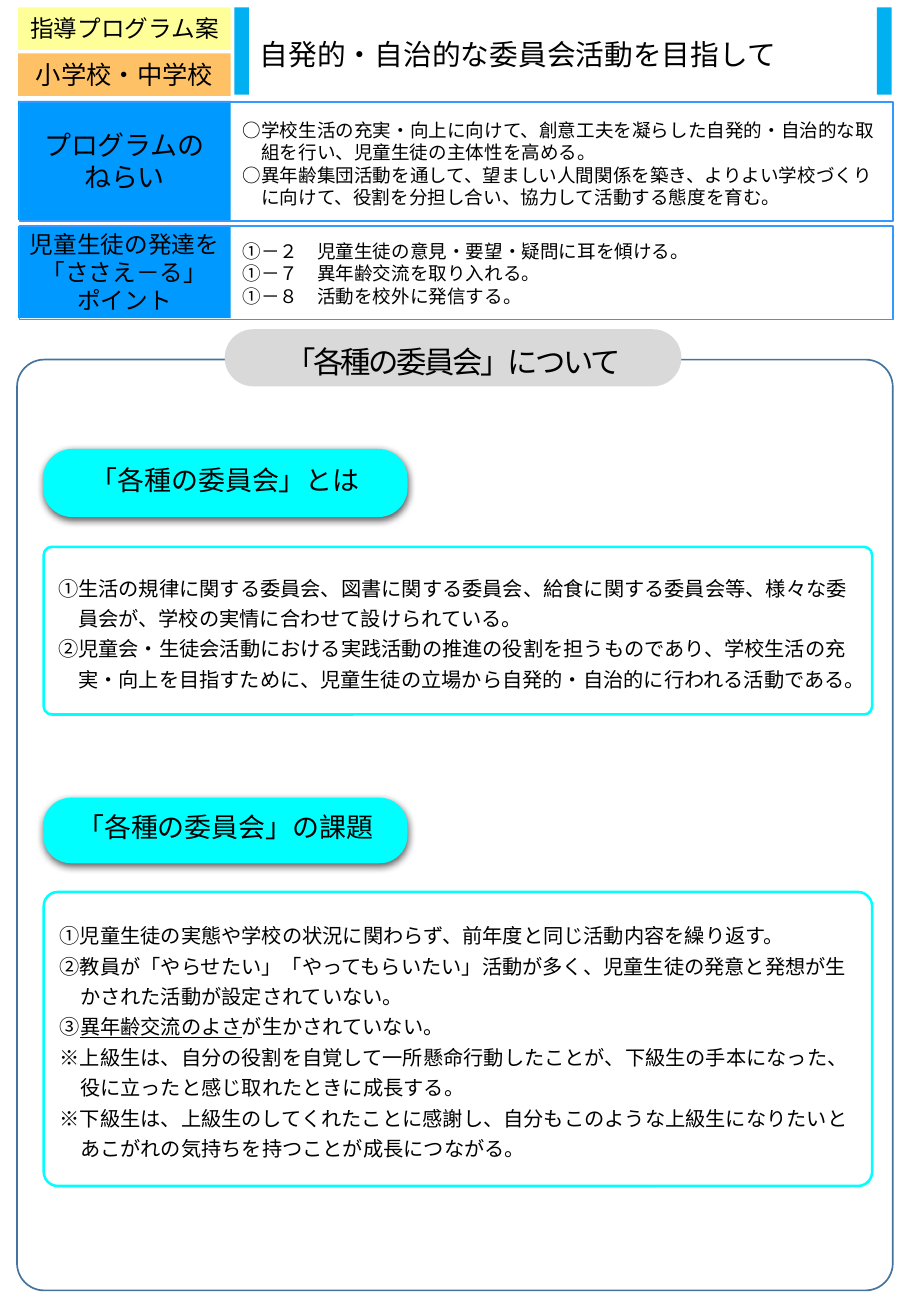
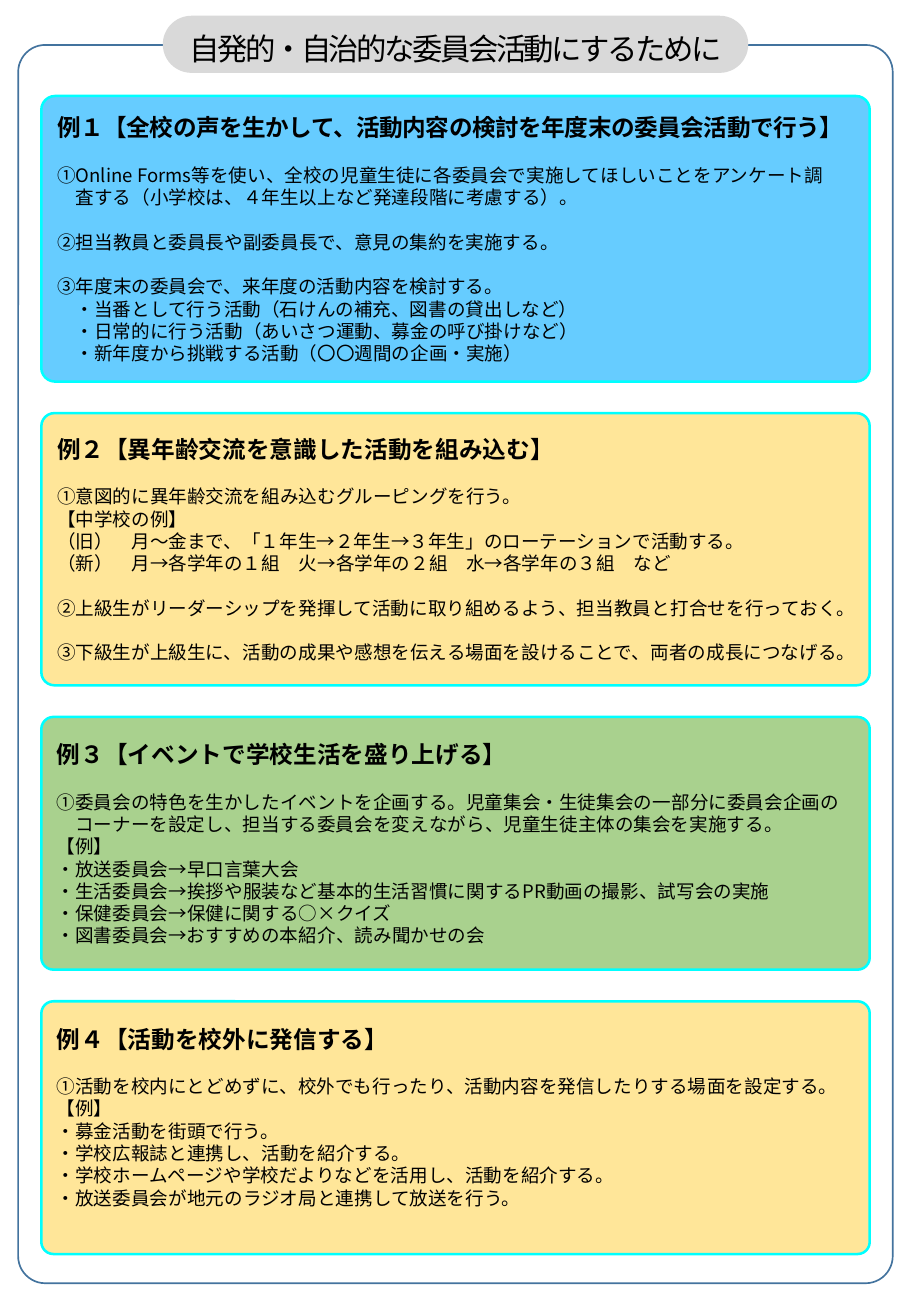
"""Build the two-page committee activity programme."""
from dataclasses import dataclass

from lxml.etree import SubElement
from pptx import Presentation
from pptx.dml.color import RGBColor
from pptx.enum.shapes import MSO_SHAPE
from pptx.enum.text import MSO_ANCHOR, PP_ALIGN
from pptx.oxml.ns import qn
from pptx.util import Pt

PX = 9144


@dataclass(frozen=True)
class Theme:
    body_font: str = "Noto Sans CJK JP"
    label_font: str = "Calibri"
    ink: str = "000000"
    yellow: str = "FFFF99"
    orange: str = "FF9900"
    bar: str = "00B0F0"
    label: str = "0099FF"
    label_frame: str = "3399FF"
    page_frame: str = "43739E"
    pill: str = "D9D9D9"
    cyan: str = "00FFFF"
    white: str = "FFFFFF"
    sky: str = "66CCFF"
    cream: str = "FFE699"
    green: str = "A9D18E"
    small: int = 11
    body: int = 12
    example: int = 14
    school: int = 15
    heading: int = 16
    title: int = 17
    page: int = 18


THEME = Theme()
LABEL = {"font": THEME.label_font, "center": True}
PILL = {"size": THEME.page, "pitch": 26, "center": True, "spacing": -150}
HEADING = {"size": THEME.heading, "pitch": 15, "center": True}
SMALL = {"size": THEME.small, "pitch": 13.2}
BODY = {"size": THEME.body, "pitch": 18}
EXAMPLE = {"size": THEME.example, "pitch": 16.8, "bold": True}
GAP = {"gap": 13.2}
INNER = {"indent": 1}


def add_box(slide, bounds, fill=None, line=None, width=1, radius=None, opacity=None, shadow=False):
    kind = MSO_SHAPE.RECTANGLE if radius is None else MSO_SHAPE.ROUNDED_RECTANGLE
    shape = slide.shapes.add_shape(kind, *(value * PX for value in bounds))
    if radius is not None:
        shape.adjustments[0] = radius
    shape.shadow.inherit = False
    properties = shape.element.spPr
    if fill:
        shape.fill.solid()
        shape.fill.fore_color.rgb = RGBColor.from_string(fill)
    else:
        shape.fill.background()
    if opacity:
        color = properties.find(".//" + qn("a:srgbClr"))
        SubElement(color, qn("a:alpha"), val=str(opacity * 1000))
    if line:
        shape.line.color.rgb = RGBColor.from_string(line)
        shape.line.width = Pt(width)
    else:
        shape.line.fill.background()
    if shadow:
        effects = properties.find(qn("a:effectLst"))
        outer = SubElement(effects, qn("a:outerShdw"), blurRad="57150", dist="19050",
                           dir="5400000", algn="ctr", rotWithShape="0")
        color = SubElement(outer, qn("a:srgbClr"), val=THEME.ink)
        SubElement(color, qn("a:alpha"), val="63000")
    return shape


def write_text(shape, style, paragraphs, anchor=MSO_ANCHOR.MIDDLE, wrap=True, bottom=5):
    frame = shape.text_frame
    frame_format = {"word_wrap": wrap, "vertical_anchor": anchor, "margin_left": 10 * PX,
                    "margin_right": 2 * PX, "margin_top": 5 * PX, "margin_bottom": bottom * PX}
    if style.get("center"):
        frame_format["margin_right"] = 10 * PX
    for name, value in frame_format.items():
        setattr(frame, name, value)
    for index, (text, changes) in enumerate(paragraphs):
        look = {**style, **changes}
        paragraph = frame.paragraphs[0] if index == 0 else frame.add_paragraph()
        paragraph_format = {
            "alignment": PP_ALIGN.CENTER if look.get("center") else PP_ALIGN.LEFT,
            "space_before": Pt(look.get("gap", 0)),
            "line_spacing": Pt(look["pitch"]) if "pitch" in look else None,
        }
        for name, value in paragraph_format.items():
            setattr(paragraph, name, value)
        if not look.get("center"):
            hang = Pt(look["size"])
            properties = paragraph._p.get_or_add_pPr()
            properties.set("marL", str(hang * (1 + look.get("indent", 0))))
            properties.set("indent", str(-hang))
        for row, row_text in enumerate(text.split("\n")):
            if row:
                paragraph.add_line_break()
            for part, part_text in enumerate(row_text.split("|")):
                run = paragraph.add_run()
                run.text = part_text
                font_format = {"name": look.get("font", THEME.body_font), "size": Pt(look["size"]),
                               "bold": look.get("bold", False), "underline": part % 2 == 1}
                for name, value in font_format.items():
                    setattr(run.font, name, value)
                run.font.color.rgb = RGBColor.from_string(THEME.ink)
                run_properties = run.font._element
                SubElement(run_properties, qn("a:ea"), typeface=font_format["name"])
                run_properties.set("spc", str(look.get("spacing", 0)))


presentation = Presentation()
presentation.slide_width = 750 * PX
presentation.slide_height = 1083 * PX

pages = [
    ((14, 296, 721, 766), (185, 271, 376, 47), "「各種の委員会」について"),
    ((15, 37, 720, 1019), (134, 13, 482, 47), "自発的・自治的な委員会活動にするために"),
]
slides = []
for frame_bounds, pill_bounds, page_title in pages:
    slide = presentation.slides.add_slide(presentation.slide_layouts[6])
    add_box(slide, frame_bounds, line=THEME.page_frame, radius=0.031)
    pill = add_box(slide, pill_bounds, THEME.pill, radius=0.5)
    write_text(pill, PILL, [(page_title, {})])
    slides.append(slide)
overview, examples = slides

title = overview.shapes.add_textbox(204 * PX, 8 * PX, 518 * PX, 70 * PX)
write_text(title, {"size": THEME.title, "pitch": 23}, [("自発的・自治的な委員会活動を目指して", {})])
for left in (193, 722):
    add_box(overview, (left, 6, 12, 72), THEME.bar)

labels = [
    (6, 35, THEME.yellow, None, THEME.example, ["指導プログラム案"]),
    (44, 35, THEME.orange, 60, THEME.school, ["小学校・中学校"]),
    (83, 98, THEME.label, None, THEME.heading, ["プログラムの", "ねらい"]),
    (186, 76, THEME.label, None, THEME.example, ["児童生徒の発達を", "「ささえ－る」", "ポイント"]),
]
for top, height, fill, opacity, size, lines in labels:
    label = add_box(overview, (15, top, 175, height), fill, opacity=opacity)
    write_text(label, {**LABEL, "size": size}, [(text, {}) for text in lines], wrap=False)

summaries = [
    (84, 98, 93, 79, MSO_ANCHOR.TOP, [
        "○学校生活の充実・向上に向けて、創意工夫を凝らした自発的・自治的な取\n組を行い、児童生徒の主体性を高める。",
        "○異年齢集団活動を通して、望ましい人間関係を築き、よりよい学校づくり\nに向けて、役割を分担し合い、協力して活動する態度を育む。",
    ]),
    (186, 77, 187, 76, MSO_ANCHOR.MIDDLE, [
        "①－２　児童生徒の意見・要望・疑問に耳を傾ける。",
        "①－７　異年齢交流を取り入れる。",
        "①－８　活動を校外に発信する。",
    ]),
]
for top, height, text_top, text_height, anchor, lines in summaries:
    add_box(overview, (16, top, 719, height), line=THEME.label_frame)
    summary = overview.shapes.add_textbox(190 * PX, text_top * PX, 543 * PX, text_height * PX)
    write_text(summary, SMALL, [(text, {}) for text in lines], anchor)

sections = [
    (370, 55, "「各種の委員会」とは", 450, 138, [
        "①生活の規律に関する委員会、図書に関する委員会、給食に関する委員会等、様々な委\n員会が、学校の実情に合わせて設けられている。",
        "②児童会・生徒会活動における実践活動の推進の役割を担うものであり、学校生活の充\n実・向上を目指すために、児童生徒の立場から自発的・自治的に行われる活動である。",
    ]),
    (657, 53, "「各種の委員会」の課題", 734, 242, [
        "①児童生徒の実態や学校の状況に関わらず、前年度と同じ活動内容を繰り返す。",
        "②教員が「やらせたい」「やってもらいたい」活動が多く、児童生徒の発意と発想が生\nかされた活動が設定されていない。",
        "③|異年齢交流のよさ|が生かされていない。",
        "※上級生は、自分の役割を自覚して一所懸命行動したことが、下級生の手本になった、\n役に立ったと感じ取れたときに成長する。",
        "※下級生は、上級生のしてくれたことに感謝し、自分もこのような上級生になりたいと\nあこがれの気持ちを持つことが成長につながる。",
    ]),
]
for top, height, heading, panel_top, panel_height, lines in sections:
    button = add_box(overview, (36, top, 299, height), THEME.cyan, THEME.cyan, 0.75, 0.427, shadow=True)
    write_text(button, HEADING, [(heading, {})], wrap=False)
    panel = add_box(overview, (36, panel_top, 682, panel_height), THEME.white, THEME.cyan, 1.5, 0.048)
    write_text(panel, BODY, [(text, {}) for text in lines])

cards = [
    (235, THEME.sky, 5, ("例１【全校の声を生かして、活動内容の検討を年度末の委員会活動で行う】", {"spacing": -30}), [
        ("①Online Forms等を使い、全校の児童生徒に各委員会で実施してほしいことをアンケート調\n査する（小学校は、４年生以上など発達段階に考慮する）。", GAP),
        ("②担当教員と委員長や副委員長で、意見の集約を実施する。", GAP),
        ("③年度末の委員会で、来年度の活動内容を検討する。", GAP),
        ("・当番として行う活動（石けんの補充、図書の貸出しなど）", INNER),
        ("・日常的に行う活動（あいさつ運動、募金の呼び掛けなど）", INNER),
        ("・新年度から挑戦する活動（〇〇週間の企画・実施）", INNER),
    ]),
    (224, THEME.cream, 5, ("例２【異年齢交流を意識した活動を組み込む】", {}), [
        ("①意図的に異年齢交流を組み込むグルーピングを行う。", GAP),
        ("【中学校の例】", {}),
        ("（旧）　月～金まで、「１年生→２年生→３年生」のローテーションで活動する。", {}),
        ("（新）　月→各学年の１組　火→各学年の２組　水→各学年の３組　など", {}),
        ("②上級生がリーダーシップを発揮して活動に取り組めるよう、担当教員と打合せを行っておく。", GAP),
        ("③下級生が上級生に、活動の成果や感想を伝える場面を設けることで、両者の成長につなげる。", GAP),
    ]),
    (208, THEME.green, 5, ("例３【イベントで学校生活を盛り上げる】", {}), [
        ("①委員会の特色を生かしたイベントを企画する。児童集会・生徒集会の一部分に委員会企画の\nコーナーを設定し、担当する委員会を変えながら、児童生徒主体の集会を実施する。", GAP),
        ("【例】", {}),
        ("・放送委員会→早口言葉大会", {}),
        ("・生活委員会→挨拶や服装など基本的生活習慣に関するPR動画の撮影、試写会の実施", {}),
        ("・保健委員会→保健に関する○×クイズ", {}),
        ("・図書委員会→おすすめの本紹介、読み聞かせの会", {}),
    ]),
    (208, THEME.cream, 23, ("例４【活動を校外に発信する】", {}), [
        ("①活動を校内にとどめずに、校外でも行ったり、活動内容を発信したりする場面を設定する。", GAP),
        ("【例】", {}),
        ("・募金活動を街頭で行う。", {}),
        ("・学校広報誌と連携し、活動を紹介する。", {}),
        ("・学校ホームページや学校だよりなどを活用し、活動を紹介する。", {}),
        ("・放送委員会が地元のラジオ局と連携して放送を行う。", {}),
    ]),
]
top = 79
for height, fill, bottom, (heading, changes), lines in cards:
    card = add_box(examples, (34, top, 682, height), fill, THEME.cyan, 1.5, 0.048)
    paragraphs = [(heading, {**EXAMPLE, **changes})] + lines
    write_text(card, SMALL, paragraphs, bottom=bottom)
    top += height + 26

presentation.save("out.pptx")
